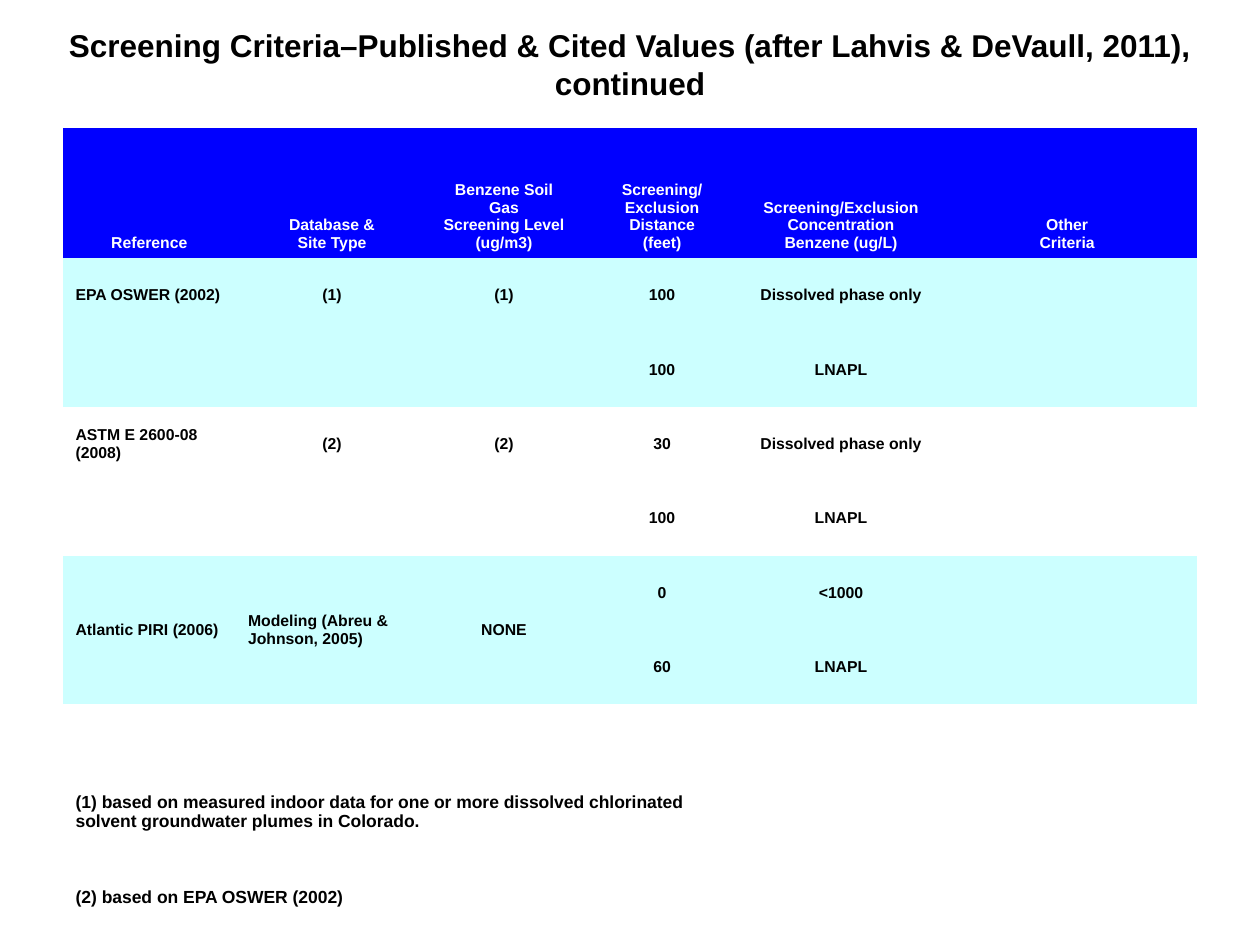
from copy import deepcopy

from pptx import Presentation
from pptx.dml.color import RGBColor
from pptx.enum.text import MSO_ANCHOR, PP_ALIGN
from pptx.oxml.ns import qn
from pptx.util import Pt

COLORS = {"black": "000000", "white": "FFFFFF", "header": "0000FF", "band": "CCFFFF"}
NO_GRID_STYLE = "{2D5ABB26-0587-4C30-8999-92F81FD0307C}"
COLUMN_WIDTHS = [98.6, 110.2, 86.4, 94.3, 110.2, 148.3]
ROW_HEIGHTS = [74.2] + [42.5] * 6 + [33.8, 55.4, 42.5]
ROW_FILLS = ["header"] + ["band"] * 2 + ["white"] * 2 + ["band"] * 2 + ["white"] * 3
HEADERS = [
    "Reference",
    "Database &\vSite Type",
    "Benzene Soil Gas\vScreening Level (ug/m3)",
    "Screening/Exclusion Distance\v(feet)",
    "Screening/Exclusion Concentration\vBenzene (ug/L)",
    "Other\vCriteria",
]
CRITERIA = [
    ["EPA OSWER (2002)", "(1)", "(1)", "100", "Dissolved phase only"],
    ["", "", "", "100", "LNAPL"],
    ["ASTM E 2600-08 (2008)", "(2)", "(2)", "30", "Dissolved phase only"],
    ["", "", "", "100", "LNAPL"],
    ["Atlantic PIRI (2006)", "Modeling (Abreu & Johnson, 2005)", "NONE", "0", "<1000"],
    ["", "", "", "60", "LNAPL"],
]
NOTES = {
    8: "(1) based on measured indoor data for one or more dissolved chlorinated "
       "solvent groundwater plumes in Colorado.",
    9: "(2) based on EPA OSWER (2002)",
}
MERGES = [(5, column, 6, column) for column in range(3)] + [(8, 0, 8, 3), (9, 0, 9, 1)]
LEFT_CELLS = [(1, 0), (3, 0), (5, 0), (5, 1), (8, 0), (9, 0)]


class SlideBuilder:
    """Draws styled text and tables on the current slide."""

    def __init__(self, slide):
        self.slide = slide
        self.font = {"name": "Arial", "bold": True}

    def text(self, frame, text, size, color, alignment):
        frame.text = text
        paragraph = frame.paragraphs[0]
        paragraph.alignment = alignment
        for run in paragraph.runs:
            for name, value in {**self.font, "size": Pt(size)}.items():
                setattr(run.font, name, value)
            run.font.color.rgb = RGBColor.from_string(COLORS[color])
        for line_break in paragraph._p.findall(qn("a:br")):
            line_break.append(deepcopy(paragraph.runs[0]._r.rPr))

    def title(self, text, left, top, width, height):
        frame = self.slide.shapes.add_textbox(Pt(left), Pt(top), Pt(width), Pt(height)).text_frame
        margins = dict.fromkeys(["margin_left", "margin_top", "margin_right", "margin_bottom"], 0)
        for name, value in {**margins, "word_wrap": True}.items():
            setattr(frame, name, value)
        self.text(frame, text, 18, "black", PP_ALIGN.CENTER)

    def table(self, left, top, widths, heights):
        table = self.slide.shapes.add_table(
            len(heights), len(widths), Pt(left), Pt(top), Pt(sum(widths)), Pt(sum(heights))
        ).table
        table._tbl.tblPr.find(qn("a:tableStyleId")).text = NO_GRID_STYLE
        table.first_row = table.horz_banding = False
        for column, width in zip(table.columns, widths):
            column.width = Pt(width)
        for row, height in zip(table.rows, heights):
            row.height = Pt(height)
        return table

    def cell(self, cell, text, fill, size, color, alignment, anchor):
        cell.fill.solid()
        cell.fill.fore_color.rgb = RGBColor.from_string(COLORS[fill])
        cell.vertical_anchor = anchor
        if text:
            self.text(cell.text_frame, text, size, color, alignment)


def main():
    presentation = Presentation()
    presentation.slide_width, presentation.slide_height = Pt(720), Pt(540)
    builder = SlideBuilder(presentation.slides.add_slide(presentation.slide_layouts[6]))
    table = builder.table(36, 73.4, COLUMN_WIDTHS, ROW_HEIGHTS)
    texts = dict(enumerate([HEADERS] + CRITERIA))
    texts.update({row: [note] for row, note in NOTES.items()})
    for row, fill in enumerate(ROW_FILLS):
        values = texts.get(row, [])
        for column in range(len(COLUMN_WIDTHS)):
            builder.cell(
                table.cell(row, column),
                values[column] if column < len(values) else "",
                fill,
                10 if row in NOTES else 9,
                "black" if row else "white",
                PP_ALIGN.LEFT if (row, column) in LEFT_CELLS else PP_ALIGN.CENTER,
                MSO_ANCHOR.MIDDLE if row else MSO_ANCHOR.BOTTOM,
            )
    for top, left, bottom, right in MERGES:
        table.cell(top, left).merge(table.cell(bottom, right))
    builder.title(
        "Screening Criteria–Published & Cited Values (after Lahvis & DeVaull, 2011), continued",
        24, 15, 672, 51,
    )
    presentation.save("out.pptx")


if __name__ == "__main__":
    main()
